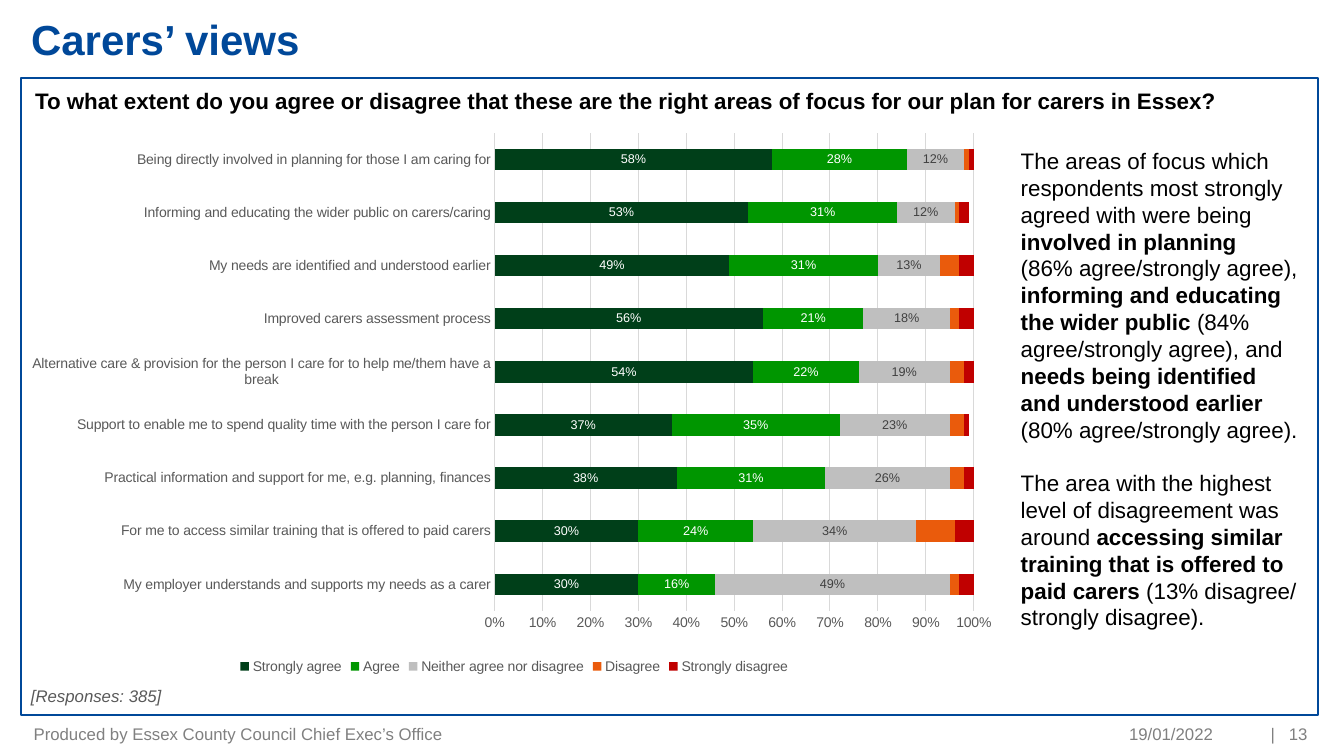
from dataclasses import dataclass

from lxml.etree import SubElement
from pptx import Presentation
from pptx.chart.data import CategoryChartData
from pptx.dml.color import RGBColor
from pptx.enum.chart import XL_CHART_TYPE, XL_LEGEND_POSITION, XL_TICK_MARK
from pptx.enum.shapes import MSO_SHAPE
from pptx.enum.text import MSO_ANCHOR, PP_ALIGN
from pptx.oxml.ns import qn
from pptx.util import Pt

BLUE, BLACK, GREY, FAINT, SLATE = "004899", "000000", "808080", "D9D9D9", "595959"
Box = tuple[float, float, float, float]


@dataclass
class Label:
    text: str
    box: Box
    size: float
    color: str
    bold: bool = False
    italic: bool = False
    align: PP_ALIGN = PP_ALIGN.LEFT
    anchor: MSO_ANCHOR = MSO_ANCHOR.TOP
    inset: Box = (7.2, 3.6, 7.2, 3.6)
    before: float = 0


@dataclass
class Answer:
    name: str
    shares: list[float]
    color: str
    ink: str = ""


MID, RIGHT = MSO_ANCHOR.MIDDLE, PP_ALIGN.RIGHT
TITLE = Label("Carers’ views", (15, 6.5, 373, 39.5), 30, BLUE, bold=True,
              anchor=MSO_ANCHOR.BOTTOM, inset=(7.2, 3.6, 7.2, 0))
LABELS = [
    Label("19/01/2022", (693.5, 519, 173, 11), 12, GREY, align=RIGHT,
          anchor=MID, inset=(7.2, 3.6, 0, 3.6)),
    Label("|   13", (872.5, 519, 61.5, 11), 12, GREY, align=RIGHT,
          anchor=MID, inset=(7.2, 3.6, 0, 3.6)),
    Label("To what extent do you agree or disagree that these are the right areas "
          "of focus for our plan for carers in Essex?",
          (18, 58.5, 895, 26.5), 16, BLACK, bold=True),
    Label("Produced by Essex County Council Chief Exec’s Office",
          (24, 519, 453.5, 11), 12, GREY, anchor=MID, inset=(0, 3.6, 7.2, 3.6)),
    Label("[Responses: 385]", (15, 486.5, 109.5, 22), 12, SLATE,
          italic=True, before=4),
]

AREAS = [
    "My employer understands and supports my needs as a carer",
    "For me to access similar training that is offered to paid carers",
    "Practical information and support for me, e.g. planning, finances",
    "Support to enable me to spend quality time with the person I care for",
    "Alternative care & provision for the person I care for to help me/them have a break",
    "Improved carers assessment process",
    "My needs are identified and understood earlier",
    "Informing and educating the wider public on carers/caring",
    "Being directly involved in planning for those I am caring for",
]
ANSWERS = [
    Answer("Strongly agree", [.3, .3, .38, .37, .54, .56, .49, .53, .58],
           "003F19", "FFFFFF"),
    Answer("Agree", [.16, .24, .31, .35, .22, .21, .31, .31, .28],
           "009600", "FFFFFF"),
    Answer("Neither agree nor disagree",
           [.49, .34, .26, .23, .19, .18, .13, .12, .12], "BFBFBF", "404040"),
    Answer("Disagree", [.02, .08, .03, .03, .03, .02, .04, .01, .01], "EA5B0C"),
    Answer("Strongly disagree",
           [.04, .05, .03, .01, .03, .03, .03, .02, .01], "C00000"),
]
PLOT = {"x": 0.48, "y": 0.03, "w": 0.49, "h": 0.85}

# Plain and bold pieces alternate, starting with plain.
FINDINGS = [
    ["The areas of focus which respondents most strongly agreed with were being ",
     "involved in planning \n", "(86% agree/strongly agree), \n",
     "informing and educating the wider public ",
     "(84% agree/strongly agree), and ",
     "needs being identified \nand understood earlier ",
     "(80% agree/strongly agree)."],
    ["The area with the highest level of disagreement was around ",
     "accessing similar training that is offered to paid carers ",
     "(13% disagree/ strongly disagree)."],
]


def rgb(code: str) -> RGBColor:
    return RGBColor.from_string(code)


def points(box: Box) -> list[Pt]:
    return [Pt(side) for side in box]


def style(font, size: float, color: str) -> None:
    font.name, font.size = "Arial", Pt(size)
    font.color.rgb = rgb(color)


def fill_text(shape, label: Label) -> None:
    shape.left, shape.top, shape.width, shape.height = points(label.box)
    frame = shape.text_frame
    frame.word_wrap = True
    frame.vertical_anchor = label.anchor
    (frame.margin_left, frame.margin_top,
     frame.margin_right, frame.margin_bottom) = points(label.inset)
    para = frame.paragraphs[0]
    para.text, para.alignment = label.text, label.align
    para.space_before = Pt(label.before)
    style(para.font, label.size, label.color)
    para.font.bold, para.font.italic = label.bold, label.italic


def add_findings(shapes) -> None:
    frame = shapes.add_textbox(*points((722, 101.5, 217, 356.5))).text_frame
    frame.word_wrap = True
    for index, pieces in enumerate(FINDINGS):
        para = frame.add_paragraph() if index else frame.paragraphs[0]
        para.space_before = Pt(19 * index)
        style(para.font, 16, BLACK)
        for place, piece in enumerate(pieces):
            for row, text in enumerate(piece.split("\n")):
                if row:
                    para.add_line_break()
                if text:
                    run = para.add_run()
                    run.text = text
                    run.font.bold = place % 2 == 1


def place_plot(chart) -> None:
    """Fix the inner plot area, as shares of the chart."""
    area = chart._chartSpace.chart.plotArea
    layout = area.get_or_add_layout() if hasattr(area, "get_or_add_layout") else None
    if layout is None:
        layout = area.find(qn("c:layout"))
    if layout is None:
        layout = SubElement(area, qn("c:layout"))
        area.insert(0, layout)
    manual = SubElement(layout, qn("c:manualLayout"))
    parts = {"layoutTarget": "inner", "xMode": "edge", "yMode": "edge", **PLOT}
    for tag, value in parts.items():
        SubElement(manual, qn(f"c:{tag}")).set("val", str(value))


def add_chart(shapes) -> None:
    data = CategoryChartData(number_format="0%")
    data.categories = AREAS
    for answer in ANSWERS:
        data.add_series(answer.name, answer.shares)
    chart = shapes.add_chart(XL_CHART_TYPE.BAR_STACKED,
                             *points((18, 83, 698.5, 401.5)), data).chart
    style(chart.font, 10, BLACK)
    chart.has_title = False
    chart.has_legend = True
    chart.legend.position = XL_LEGEND_POSITION.BOTTOM
    chart.legend.include_in_layout = False
    style(chart.legend.font, 10, SLATE)

    for axis in (chart.category_axis, chart.value_axis):
        axis.major_tick_mark = axis.minor_tick_mark = XL_TICK_MARK.NONE
        style(axis.tick_labels.font, 10, SLATE)
    scale = chart.value_axis
    scale.minimum_scale, scale.maximum_scale, scale.major_unit = 0, 1, 0.1
    scale.tick_labels.number_format = "0%"
    scale.tick_labels.number_format_is_linked = False
    scale.format.line.fill.background()
    for line in (chart.category_axis.format.line, scale.major_gridlines.format.line):
        line.color.rgb, line.width = rgb(FAINT), Pt(0.75)

    plot = chart.plots[0]
    plot.gap_width, plot.overlap, plot.vary_by_categories = 150, 100, False
    for series, answer in zip(plot.series, ANSWERS):
        series.format.fill.solid()
        series.format.fill.fore_color.rgb = rgb(answer.color)
        if answer.ink:
            marks = series.data_labels
            marks.show_value = True
            marks.number_format, marks.number_format_is_linked = "0%", False
            style(marks.font, 9, answer.ink)
    place_plot(chart)


def main() -> None:
    deck = Presentation()
    deck.slide_width, deck.slide_height = Pt(960), Pt(540)
    slide = deck.slides.add_slide(deck.slide_layouts[5])
    shapes = slide.shapes
    fill_text(shapes.title, TITLE)
    border = shapes.add_shape(MSO_SHAPE.RECTANGLE, *points((15, 55.5, 926.5, 455)))
    border.shadow.inherit = False
    border.fill.background()
    border.line.color.rgb, border.line.width = rgb(BLUE), Pt(1.5)
    add_chart(shapes)
    for label in LABELS:
        fill_text(shapes.add_textbox(*points(label.box)), label)
    add_findings(shapes)
    deck.save("out.pptx")


if __name__ == "__main__":
    main()
